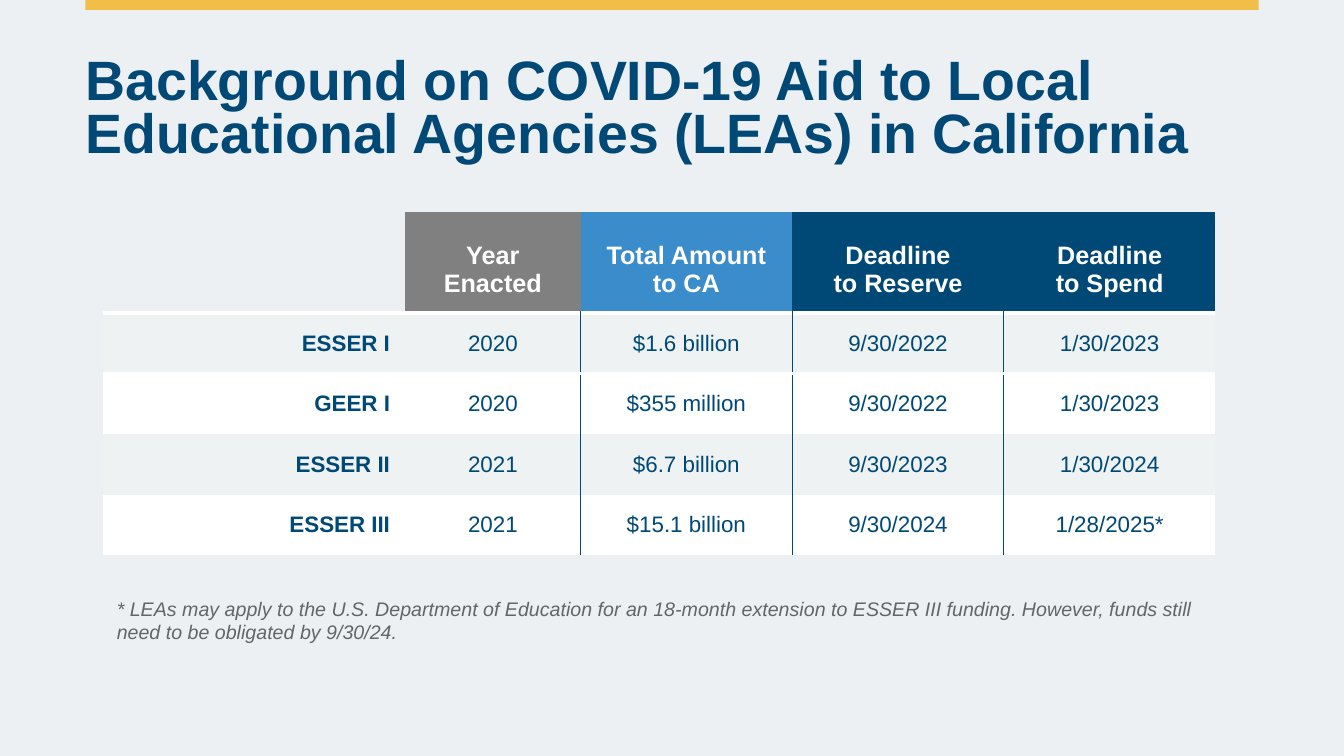
from dataclasses import dataclass

from lxml.etree import SubElement
from pptx import Presentation
from pptx.dml.color import RGBColor
from pptx.enum.shapes import MSO_SHAPE
from pptx.enum.text import MSO_ANCHOR, MSO_AUTO_SIZE, PP_ALIGN
from pptx.oxml import parse_xml
from pptx.oxml.ns import nsdecls, qn
from pptx.util import Pt


@dataclass(frozen=True)
class Theme:
    font: str = "Arial"
    background: str = "EDF0F2"
    gold: str = "F1BE48"
    navy: str = "004976"
    blue: str = "3B8CCB"
    gray: str = "808080"
    white: str = "FFFFFF"
    note: str = "626669"
    title_size: float = 39.6
    header_size: float = 18
    body_size: float = 16
    note_size: float = 14


theme = Theme()
NO_STYLE_NO_GRID = "{2D5ABB26-0587-4C30-8999-92F81FD0307C}"


def format_text(p, size, color, bold=False, italic=False):
    for r in p.runs:
        r.font.name = theme.font
        r.font.size = Pt(size)
        r.font.bold = bold
        r.font.italic = italic
        r.font.color.rgb = RGBColor.from_string(color)


def add_border(cell, side, color, width, opacity=100):
    """Add one cell edge; call in the order L, R, T, B and before the fill."""
    cell._tc.get_or_add_tcPr().append(parse_xml(
        f'<a:ln{side} {nsdecls("a")} w="{Pt(width)}"><a:solidFill>'
        f'<a:srgbClr val="{color}"><a:alpha val="{opacity * 1000}"/></a:srgbClr>'
        f'</a:solidFill><a:prstDash val="solid"/></a:ln{side}>'))


prs = Presentation()
prs.slide_width, prs.slide_height = Pt(960), Pt(540)
s = prs.slides.add_slide(prs.slide_layouts[5])
s.background.fill.solid()
s.background.fill.fore_color.rgb = RGBColor.from_string(theme.background)

# Top accent bar
bar = s.shapes.add_shape(MSO_SHAPE.RECTANGLE, Pt(61), 0, Pt(838), Pt(7))
bar.shadow.inherit = False
bar.fill.solid()
bar.fill.fore_color.rgb = RGBColor.from_string(theme.gold)
bar.line.fill.background()

# Title
title = s.shapes.title
title.left, title.top, title.width, title.height = Pt(61), Pt(9.4), Pt(828), Pt(115)
tf = title.text_frame
tf.text = "Background on COVID-19 Aid to Local Educational Agencies (LEAs) in California"
tf.word_wrap = True
tf.auto_size = MSO_AUTO_SIZE.NONE
tf.vertical_anchor = MSO_ANCHOR.BOTTOM
tf.margin_left = tf.margin_top = tf.margin_right = 0
tf.margin_bottom = Pt(7.2)
p = tf.paragraphs[0]
p.alignment = PP_ALIGN.LEFT
p.line_spacing = 0.8
format_text(p, theme.title_size, theme.navy, bold=True)

# Aid table
rows = [
    ["", "Year\vEnacted", "Total Amount\vto CA", "Deadline\vto Reserve", "Deadline\vto Spend"],
    ["ESSER I", "2020", "$1.6 billion", "9/30/2022", "1/30/2023"],
    ["GEER I", "2020", "$355 million", "9/30/2022", "1/30/2023"],
    ["ESSER II", "2021", "$6.7 billion", "9/30/2023", "1/30/2024"],
    ["ESSER III", "2021", "$15.1 billion", "9/30/2024", "1/28/2025*"],
]
header_fills = [None, theme.gray, theme.blue, theme.navy, theme.navy]
col_widths = [216, 125.3, 151.2, 151.2, 151.2]
row_heights = [72.4] + [43.2] * 4

frame = s.shapes.add_table(len(rows), len(col_widths), Pt(73.4), Pt(151.2),
                           Pt(sum(col_widths)), Pt(sum(row_heights)))
table = frame.table
table.first_row = table.horz_banding = False
table._tbl.tblPr.find(qn("a:tableStyleId")).text = NO_STYLE_NO_GRID
for column, width in zip(table.columns, col_widths):
    column.width = Pt(width)
for row, height in zip(table.rows, row_heights):
    row.height = Pt(height)

for i, row in enumerate(rows):
    for j, text in enumerate(row):
        cell = table.cell(i, j)
        is_header, is_label = i == 0, j == 0
        cell.margin_left = cell.margin_right = cell.margin_bottom = Pt(10.8)
        cell.margin_top = Pt(21.6 if is_header else 10.8)
        cell.vertical_anchor = MSO_ANCHOR.BOTTOM if is_header else MSO_ANCHOR.MIDDLE

        if not is_header and j > 1:
            add_border(cell, "L", theme.navy, 1, 50)
        if not is_header and 1 <= j < len(row) - 1:
            add_border(cell, "R", theme.navy, 1, 50)
        if i == 1:
            add_border(cell, "T", theme.white, 3)
        if is_header:
            add_border(cell, "B", theme.white, 3)

        fill = header_fills[j] if is_header else theme.white
        if fill:
            cell.fill.solid()
            cell.fill.fore_color.rgb = RGBColor.from_string(fill)
        else:
            cell.fill.background()
        if i % 2 == 1:
            color = cell._tc.tcPr.find(qn("a:solidFill")).find(qn("a:srgbClr"))
            SubElement(color, qn("a:alpha"), val="15000")

        p = cell.text_frame.paragraphs[0]
        p.text = text
        p.alignment = PP_ALIGN.RIGHT if is_label else PP_ALIGN.CENTER
        if is_header:
            p.line_spacing = Pt(20)
            format_text(p, theme.header_size, theme.white, bold=True)
        else:
            format_text(p, theme.body_size, theme.navy, bold=is_label)

# Footnote
note = s.shapes.add_textbox(Pt(76.3), Pt(422.6), Pt(791.3), Pt(41))
tf = note.text_frame
tf.word_wrap = True
tf.text = ("* LEAs may apply to the U.S. Department of Education for an 18-month extension "
           "to ESSER III funding. However, funds still need to be obligated by 9/30/24.")
format_text(tf.paragraphs[0], theme.note_size, theme.note, italic=True)

prs.save("out.pptx")
